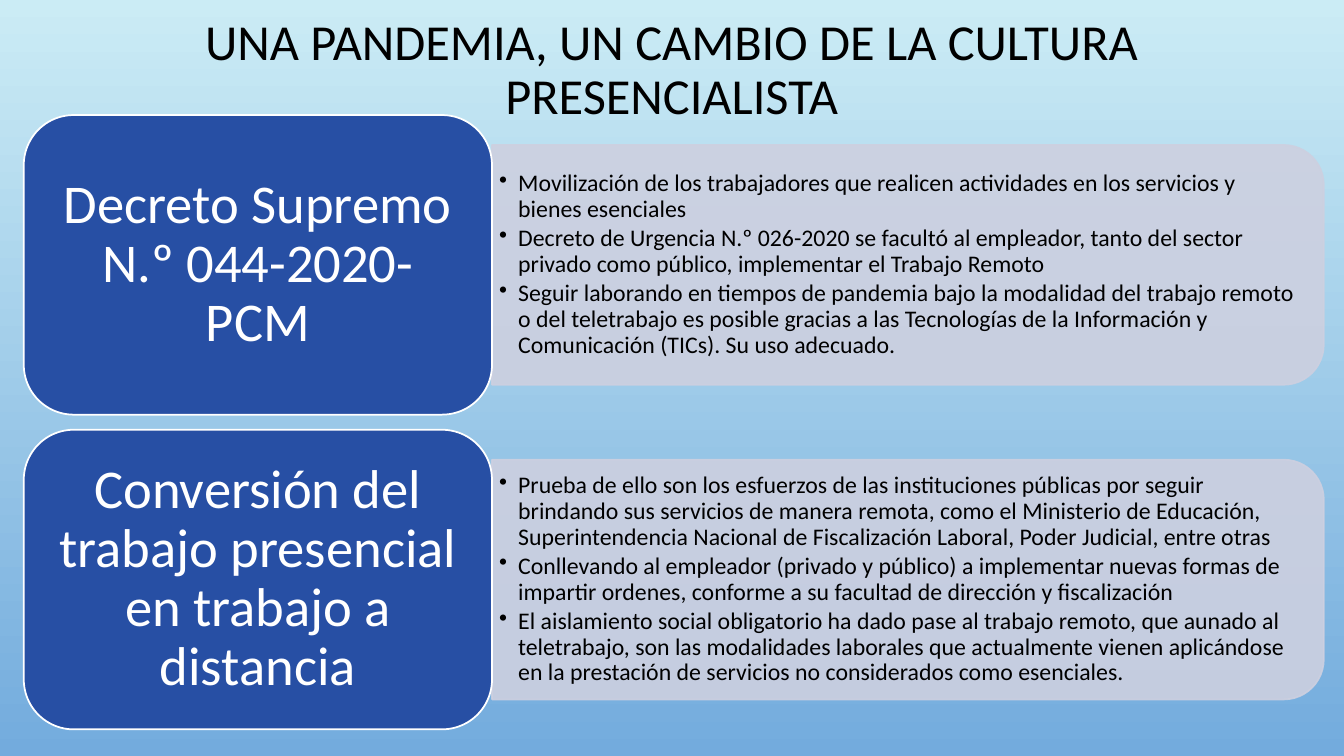
"""Build a slide on the shift from on-site to remote work, with two decree cards."""
from dataclasses import dataclass

from lxml import etree
from pptx import Presentation
from pptx.dml.color import RGBColor
from pptx.enum.shapes import MSO_SHAPE
from pptx.enum.text import MSO_ANCHOR, PP_ALIGN
from pptx.oxml.ns import qn
from pptx.util import Cm, Pt

CARD_SHAPE = MSO_SHAPE.ROUNDED_RECTANGLE
PANEL_SHAPE = MSO_SHAPE.ROUND_2_SAME_RECTANGLE
MIDDLE = MSO_ANCHOR.MIDDLE
CENTER = PP_ALIGN.CENTER

TITLE = "UNA PANDEMIA, UN CAMBIO DE LA CULTURA PRESENCIALISTA"
TOPICS = [
    ("Decreto Supremo N.º 044-2020-PCM", [
        "Movilización de los trabajadores que realicen actividades en los servicios y "
        "bienes esenciales",
        "Decreto de Urgencia N.º 026-2020 se facultó al empleador, tanto del sector "
        "privado como público, implementar el Trabajo Remoto",
        "Seguir laborando en tiempos de pandemia bajo la modalidad del trabajo remoto "
        "o del teletrabajo es posible gracias a las Tecnologías de la Información y "
        "Comunicación (TICs). Su uso adecuado.",
    ]),
    ("Conversión del trabajo presencial en trabajo a distancia", [
        "Prueba de ello son los esfuerzos de las instituciones públicas por seguir "
        "brindando sus servicios de manera remota, como el Ministerio de Educación, "
        "Superintendencia Nacional de Fiscalización Laboral, Poder Judicial, entre otras",
        "Conllevando al empleador (privado y público) a implementar nuevas formas de "
        "impartir ordenes, conforme a su facultad de dirección y fiscalización",
        "El aislamiento social obligatorio ha dado pase al trabajo remoto, que aunado al "
        "teletrabajo, son las modalidades laborales que actualmente vienen aplicándose "
        "en la prestación de servicios no considerados como esenciales.",
    ]),
]


@dataclass(frozen=True)
class Theme:
    """Colours and type sizes of the slide."""
    font: str = "Calibri"
    sky_top: RGBColor = RGBColor(0xCB, 0xEC, 0xF5)
    sky_bottom: RGBColor = RGBColor(0x73, 0xAB, 0xDD)
    card: RGBColor = RGBColor(0x27, 0x4F, 0xA4)
    panel: RGBColor = RGBColor(0xCD, 0xD0, 0xE0)
    dark: RGBColor = RGBColor(0, 0, 0)
    light: RGBColor = RGBColor(0xFF, 0xFF, 0xFF)
    title_size: Pt = Pt(36)
    card_size: Pt = Pt(39)
    bullet_size: Pt = Pt(17)
    outline: Pt = Pt(1.25)
    panel_alpha: str = "90000"


THEME = Theme()
CARD_LEFT, CARD_TOP = Cm(0.6), Cm(2.9)
CARD_WIDTH, CARD_HEIGHT = Cm(11.8), Cm(7.55)
CARD_GAP = Cm(0.38)
PANEL_WIDTH, PANEL_HEIGHT = Cm(20.96), Cm(6.04)
BULLETS_WIDTH, BULLETS_HEIGHT = Cm(20.66), Cm(5.46)
BULLET_INDENT = Cm(0.48)


def style_paragraph(paragraph, size, color):
    """Apply the theme font and tight line spacing."""
    paragraph.line_spacing = 0.9
    paragraph.font.name = THEME.font
    paragraph.font.size = size
    paragraph.font.color.rgb = color


def set_frame(frame, side, edge):
    """Wrap and centre text vertically inside the given margins."""
    frame.word_wrap = True
    frame.vertical_anchor = MIDDLE
    frame.margin_left = frame.margin_right = side
    frame.margin_top = frame.margin_bottom = edge


def add_block(slide, preset, box, fill, outline):
    """Add a flat filled shape with an outline."""
    block = slide.shapes.add_shape(preset, *box)
    block.shadow.inherit = False
    block.fill.solid()
    block.fill.fore_color.rgb = fill
    block.line.color.rgb = outline
    block.line.width = THEME.outline
    return block


def add_panel(slide, left, middle):
    """Add the translucent panel, turned so its round corners face right."""
    box = (left + (PANEL_WIDTH - PANEL_HEIGHT) // 2, middle - PANEL_WIDTH // 2,
           PANEL_HEIGHT, PANEL_WIDTH)
    panel = add_block(slide, PANEL_SHAPE, box, THEME.panel, THEME.panel)
    panel.rotation = 90
    for color in panel._element.spPr.iter(qn("a:srgbClr")):
        etree.SubElement(color, qn("a:alpha"), val=THEME.panel_alpha)


def add_bullets(slide, left, middle, points):
    """Add the bulleted text over a panel."""
    frame = slide.shapes.add_textbox(
        left, middle - BULLETS_HEIGHT // 2, BULLETS_WIDTH, BULLETS_HEIGHT).text_frame
    set_frame(frame, Cm(0.18), Cm(0.1))
    frame.text = "\n".join(points)
    for paragraph in frame.paragraphs:
        paragraph.level = 1
        properties = paragraph._p.get_or_add_pPr()
        properties.set("marL", str(BULLET_INDENT))
        properties.set("indent", str(-BULLET_INDENT))
        etree.SubElement(properties, qn("a:buChar"), char="•")
        paragraph.space_after = Pt(2.6)
        style_paragraph(paragraph, THEME.bullet_size, THEME.dark)


def add_card(slide, top, heading):
    """Add the blue card with its heading."""
    card = add_block(slide, CARD_SHAPE, (CARD_LEFT, top, CARD_WIDTH, CARD_HEIGHT),
                     THEME.card, THEME.light)
    set_frame(card.text_frame, Cm(0.41), Cm(0.2))
    card.text_frame.text = heading
    paragraph = card.text_frame.paragraphs[0]
    paragraph.alignment = CENTER
    style_paragraph(paragraph, THEME.card_size, THEME.light)


def add_title(slide):
    """Place and format the title."""
    title = slide.shapes.title
    title.left, title.top, title.width, title.height = Cm(2.54), Cm(-0.43), Cm(28.78), Cm(4.45)
    title.text_frame.text = TITLE
    set_frame(title.text_frame, Cm(0.25), Cm(0.13))
    paragraph = title.text_frame.paragraphs[0]
    paragraph.alignment = CENTER
    style_paragraph(paragraph, THEME.title_size, THEME.dark)


def main():
    """Create and save the presentation."""
    deck = Presentation()
    deck.slide_width, deck.slide_height = Cm(33.87), Cm(19.05)
    slide = deck.slides.add_slide(deck.slide_layouts[5])
    sky = slide.background.fill
    sky.gradient()
    sky.gradient_angle = 270
    for stop, color in zip(sky.gradient_stops, (THEME.sky_top, THEME.sky_bottom)):
        stop.color.rgb = color
    add_title(slide)
    panel_left = CARD_LEFT + CARD_WIDTH
    for row, (heading, points) in enumerate(TOPICS):
        top = CARD_TOP + row * (CARD_HEIGHT + CARD_GAP)
        middle = top + CARD_HEIGHT // 2
        add_panel(slide, panel_left, middle)
        add_bullets(slide, panel_left, middle, points)
        add_card(slide, top, heading)
    deck.save("out.pptx")


if __name__ == "__main__":
    main()
